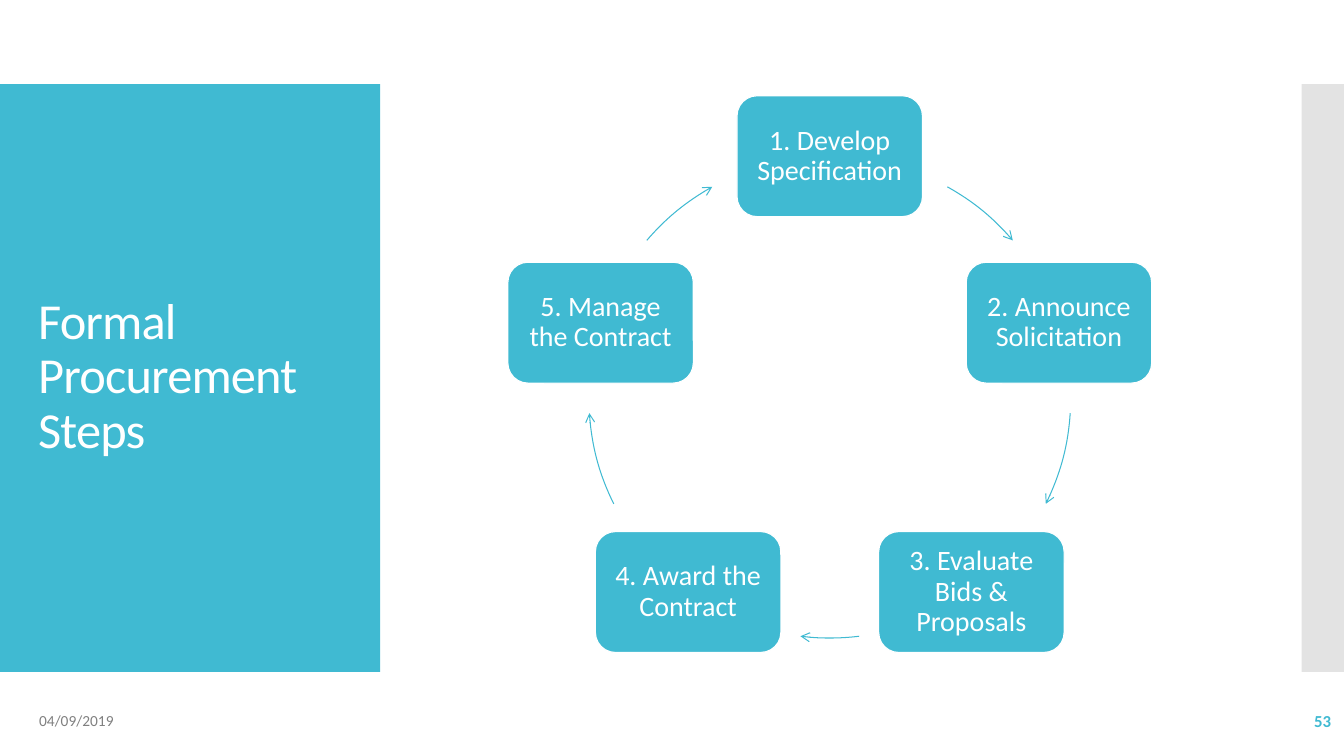
import math
import pptx
import pptx.util
import pptx.dml.color
import pptx.enum.shapes
import pptx.enum.text
import pptx.oxml.ns
import lxml.etree

TITLE = "Formal Procurement Steps"
DATE = "04/09/2019"
PAGE_NUMBER = "53"
STEPS = [
    "1. Develop Specification",
    "2. Announce Solicitation",
    "3. Evaluate Bids & Proposals",
    "4. Award the Contract",
    "5. Manage the Contract",
]
ARROW_ANGLES = [(299.2, 319.4), (3.8, 26.3), (83, 97), (153.7, 176.2), (220.6, 240.8)]
COLORS = {"teal": "40BAD2", "white": "FFFFFF", "band": "C8C8C8", "gray": "808080"}
FONT = "Calibri"
WIDTH, HEIGHT = 13.33, 7.5
BAND_TOP, BAND_HEIGHT = HEIGHT / 9, HEIGHT * 7 / 9
PANEL_WIDTH, STRIP_WIDTH = 3.77, 0.42
CENTER_X, CENTER_Y, RADIUS = 8.23, 3.94, 2.39
STEP_WIDTH, STEP_HEIGHT = 1.84, 1.2

SHAPES = pptx.enum.shapes.MSO_SHAPE
ALIGN = pptx.enum.text.PP_ALIGN


def color(name):
    return pptx.dml.color.RGBColor.from_string(COLORS[name])


def inches(*lengths):
    return [pptx.util.Inches(length) for length in lengths]


def add_child(parent, tag, **attributes):
    return lxml.etree.SubElement(parent, pptx.oxml.ns.qn(tag), attributes)


def add_shape(page, kind, place, fill=None, line=None, weight=0.75):
    shape = page.shapes.add_shape(kind, *inches(*place))
    shape.shadow.inherit = False
    if fill:
        shape.fill.solid()
        shape.fill.fore_color.rgb = color(fill)
    else:
        shape.fill.background()
    if line:
        shape.line.color.rgb = color(line)
        shape.line.width = pptx.util.Pt(weight)
    else:
        shape.line.fill.background()
    return shape


def write(box, text, size, ink, align=ALIGN.LEFT, bold=False, spacing=1.0):
    frame = box.text_frame
    frame.word_wrap = True
    frame.vertical_anchor = pptx.enum.text.MSO_ANCHOR.MIDDLE
    para = frame.paragraphs[0]
    para.alignment = align
    para.line_spacing = spacing
    span = para.add_run()
    span.text = text
    span.font.name = FONT
    span.font.size = pptx.util.Pt(size)
    span.font.bold = bold
    span.font.color.rgb = color(ink)
    return span


def add_text(page, place, *style, **options):
    return write(page.shapes.add_textbox(*inches(*place)), *style, **options)


def add_step(page, index, text):
    angle = math.radians(360 / len(STEPS) * index - 90)
    left = CENTER_X + RADIUS * math.cos(angle) - STEP_WIDTH / 2
    top = CENTER_Y + RADIUS * math.sin(angle) - STEP_HEIGHT / 2
    step = add_shape(page, SHAPES.ROUNDED_RECTANGLE,
                     (left, top, STEP_WIDTH, STEP_HEIGHT), "teal", "white", 0.85)
    frame = step.text_frame
    frame.margin_left = frame.margin_right = pptx.util.Inches(0.08)
    frame.margin_top = frame.margin_bottom = pptx.util.Inches(0.08)
    write(step, text, 20, "white", ALIGN.CENTER, spacing=0.9)


def add_arrow(page, start, end):
    place = (CENTER_X - RADIUS, CENTER_Y - RADIUS, 2 * RADIUS, 2 * RADIUS)
    arrow = add_shape(page, SHAPES.ARC, place, line="teal")
    arrow.adjustments[0] = start * 0.6
    arrow.adjustments[1] = end * 0.6
    outline = arrow.line.color._xFill.getparent()
    add_child(outline, "a:tailEnd", type="arrow")


def main():
    deck = pptx.Presentation()
    deck.slide_width, deck.slide_height = inches(WIDTH, HEIGHT)
    page = deck.slides.add_slide(deck.slide_layouts[6])

    add_shape(page, SHAPES.RECTANGLE, (0, BAND_TOP, PANEL_WIDTH, BAND_HEIGHT), "teal")
    strip = add_shape(page, SHAPES.RECTANGLE,
                      (WIDTH - STRIP_WIDTH, BAND_TOP, STRIP_WIDTH, BAND_HEIGHT), "band")
    for tint in strip.element.spPr.iter(pptx.oxml.ns.qn("a:srgbClr")):
        add_child(tint, "a:alpha", val="50000")

    title = add_text(page, (0.28, 1.23, 3.22, 5.03), TITLE, 36, "white", spacing=0.9)
    title.font._element.set("spc", "-60")
    add_text(page, (0.29, 6.95, 3, 0.4), DATE, 11, "gray")
    add_text(page, (11.63, 6.95, 1.67, 0.4), PAGE_NUMBER, 12, "teal",
             align=ALIGN.RIGHT, bold=True)

    for index, (text, angles) in enumerate(zip(STEPS, ARROW_ANGLES)):
        add_step(page, index, text)
        add_arrow(page, *angles)

    deck.save("out.pptx")


if __name__ == "__main__":
    main()
